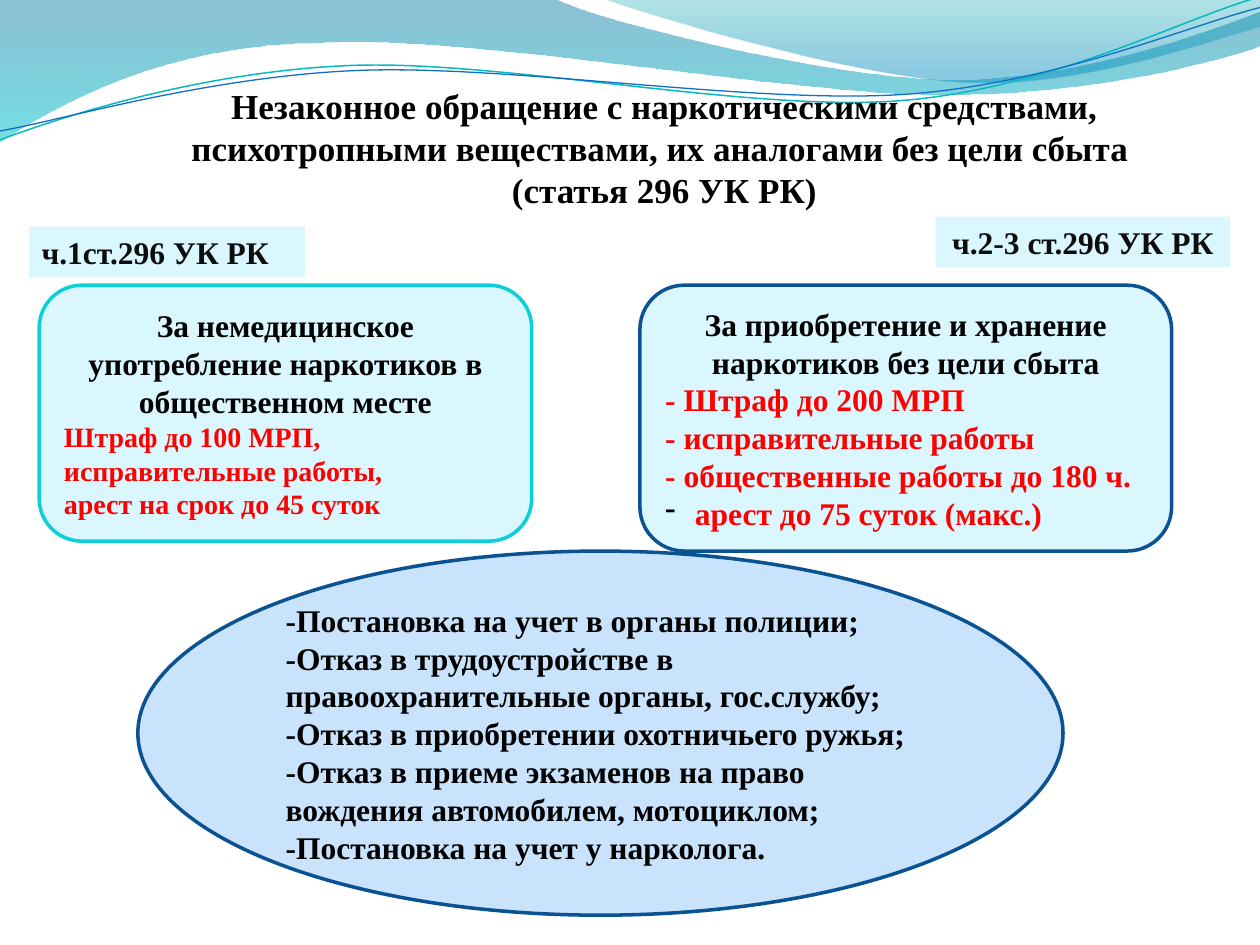
"""Build the slide on article 296: waves, title, two penalty boxes and an ellipse."""
from math import cos, radians, sin
from lxml.etree import SubElement as Sub
from pptx import Presentation
from pptx.dml.color import RGBColor as Rgb
from pptx.enum.shapes import MSO_SHAPE as Kind
from pptx.enum.text import MSO_ANCHOR as Anchor, PP_ALIGN as Align
from pptx.oxml.ns import qn
from pptx.util import Cm, Pt

FONT = "Times New Roman"
BLACK, RED, INK = "000000", "FF0000", "0D0D0D"
PALE, SKY, NAVY, TEAL = "DAF6FE", "C8E3FB", "0B5292", "0BD0D9"
MID, LEFT, JUST = Align.CENTER, Align.LEFT, Align.JUSTIFY
TILT = 2.7

BANDS = [
    ([[(0, -0.01)], [(4.4, -0.01)],
      [(4.76, 0.17), (6.64, 0.63), (7.58, 0.63)],
      [(8.53, 0.63), (9.58, 0.26), (10, 0.09)], [(10.01, 0.36)],
      [(9.83, 0.44), (8.7, 0.76), (7.46, 0.75)],
      [(6.22, 0.75), (3.82, 0.28), (2.57, 0.34)],
      [(1.29, 0.35), (0.46, 0.83), (-0.01, 1.13)], [(0, -0.01)]],
     [(0, "0074A1", 45), (1, "00C6CF", 55)]),
    ([[(4.79, -0.01)], [(5.09, 0.11), (6.82, 0.62), (7.69, 0.65)],
      [(8.56, 0.69), (9.61, 0.32), (10, 0.21)], [(10, 0)], [(4.79, -0.01)]],
     [(0, "00A1A9", 30), (0.8, "008BBF", 45)]),
]
WAVES = [
    ([[(0, 1.11)], [(0.48, 0.93), (1.58, 0.57), (2.77, 0.52)],
      [(3.95, 0.47), (5.93, 0.89), (7.13, 0.8)],
      [(8.33, 0.71), (9.38, 0.15), (9.98, -0.02)]],
     (4.99, 0.58), "0AB8BF", 0.85),
    ([[(0, 1.04)], [(0.47, 0.96), (1.64, 0.61), (2.83, 0.56)],
      [(4.03, 0.51), (5.97, 0.83), (7.17, 0.75)],
      [(8.36, 0.67), (9.41, 0.21), (10, 0.06)]],
     (5, 0.59), "0F6FC6", 0.75),
]
BOXES = [
    (Kind.FLOWCHART_ALTERNATE_PROCESS, (12.9, 5.75, 10.72, 5.36), PALE, NAVY, [
        ("За приобретение и хранение наркотиков без цели сбыта", MID, 18, BLACK),
        ("- Штраф до 200 МРП", JUST, 18, RED),
        ("- исправительные работы", JUST, 18, RED),
        ("- общественные работы до 180 ч.", JUST, 18, RED),
        ("арест до 75 суток (макс.)", JUST, 18, RED, "-")]),
    (Kind.FLOWCHART_ALTERNATE_PROCESS, (0.79, 5.75, 9.93, 5.16), PALE, TEAL, [
        ("За немедицинское употребление наркотиков в общественном месте",
         MID, 18, BLACK),
        ("Штраф до 100 МРП,", JUST, 16, RED),
        ("исправительные работы,", JUST, 16, RED),
        ("арест на срок до 45 суток ", JUST, 16, RED)]),
    (Kind.OVAL, (2.78, 11.11, 18.65, 7.34), SKY, NAVY, [
        (line, LEFT, 18, BLACK) for line in (
            "-Постановка на учет в органы полиции;",
            "-Отказ в трудоустройстве в правоохранительные органы, гос.службу;",
            "-Отказ в приобретении охотничьего ружья;",
            "-Отказ в приеме экзаменов на право вождения автомобилем, мотоциклом;",
            "-Постановка на учет у нарколога.")]),
    (Kind.RECTANGLE, (0.59, 4.57, 5.56, 1.02), PALE, None,
     [("ч.1ст.296 УК РК", LEFT, 18, INK)]),
    (Kind.RECTANGLE, (18.86, 4.37, 5.94, 1.02), PALE, None,
     [("ч.2-3 ст.296 УК РК", MID, 18, INK)]),
]
TITLE = [
    ("Незаконное обращение с наркотическими средствами, психотропными "
     "веществами, их аналогами без цели сбыта ", MID, 20, BLACK),
    ("(статья 296 УК РК)", MID, 20, BLACK),
]


def tint(code):
    """Turn a hex string into a colour."""
    return Rgb.from_string(code)


def turn(curve, hub):
    """Turn each point of the curve by the tilt around the hub."""
    c, s = cos(radians(TILT)), sin(radians(TILT))
    left, top = hub
    return [[(left + (x - left) * c - (y - top) * s,
              top + (x - left) * s + (y - top) * c) for x, y in part]
            for part in curve]


def draw(shapes, curve, close):
    """Add a freeform whose parts of three points are cubic curves."""
    first, *rest = [(Cm(x * 2.54), Cm(y * 2.54)) for part in curve for x, y in part]
    pen = shapes.build_freeform(*first)
    pen.add_line_segments(rest, close=close)
    form = pen.convert_to_shape()
    form.shadow.inherit = False
    lines = form.element.spPr.iter(qn("a:lnTo"))
    nodes = iter(list(lines))
    for part in curve[1:]:
        node, *more = [next(nodes) for _ in part]
        if more:
            node.tag = qn("a:cubicBezTo")
        for other in more:
            node.append(other[0])
            other.getparent().remove(other)
    return form


def edge(shape, code, width):
    """Colour the outline, or drop it."""
    if code:
        shape.line.color.rgb = tint(code)
        shape.line.width = Pt(width)
    else:
        shape.line.fill.background()


def shade(shape, stops):
    """Fill from top to bottom with see-through colours."""
    shape.fill.gradient()
    shape.fill.gradient_angle = 270
    for stop, (place, code, alpha) in zip(shape.fill.gradient_stops, stops):
        stop.position = place
        stop.color.rgb = tint(code)
    marks = shape.element.spPr.iter(qn("a:srgbClr"))
    for mark, (place, code, alpha) in zip(marks, stops):
        Sub(mark, qn("a:alpha"), val=str(alpha * 1000))


def dot(para, sign):
    """Give the paragraph a black hanging bullet."""
    props = para._p.get_or_add_pPr()
    props.set("marL", str(Cm(0.6)))
    props.set("indent", str(-Cm(0.6)))
    Sub(Sub(props, qn("a:buClr")), qn("a:srgbClr"), val=BLACK)
    Sub(props, qn("a:buFontTx"))
    Sub(props, qn("a:buChar"), char=sign)
    props.append(props.find(qn("a:defRPr")))


def write(frame, lines):
    """Put the lines into the frame, one paragraph each."""
    frame.word_wrap = True
    for i, (text, align, size, code, *sign) in enumerate(lines):
        para = frame.add_paragraph() if i else frame.paragraphs[0]
        para.text = text
        para.alignment = align
        font = para.font
        font.name, font.size, font.bold = FONT, Pt(size), True
        font.color.rgb = tint(code)
        if sign:
            dot(para, *sign)


def main():
    """Draw everything from back to front and save."""
    deck = Presentation()
    deck.slide_width, deck.slide_height = Cm(25.4), Cm(19.05)
    shapes = deck.slides.add_slide(deck.slide_layouts[6]).shapes
    for curve, stops in BANDS:
        band = draw(shapes, curve, True)
        shade(band, stops)
        edge(band, None, 0)
    for curve, hub, code, width in WAVES:
        wave = draw(shapes, turn(curve, hub), False)
        wave.rotation = -TILT
        wave.fill.background()
        edge(wave, code, width)
    for kind, area, fill, rim, lines in BOXES:
        box = shapes.add_shape(kind, *map(Cm, area))
        box.shadow.inherit = False
        box.fill.solid()
        box.fill.fore_color.rgb = tint(fill)
        edge(box, rim, 2)
        box.text_frame.vertical_anchor = Anchor.MIDDLE
        write(box.text_frame, lines)
    head = shapes.add_textbox(*map(Cm, (1.99, 1.57, 22.81, 2.82)))
    write(head.text_frame, TITLE)
    deck.save("out.pptx")


if __name__ == "__main__":
    main()
